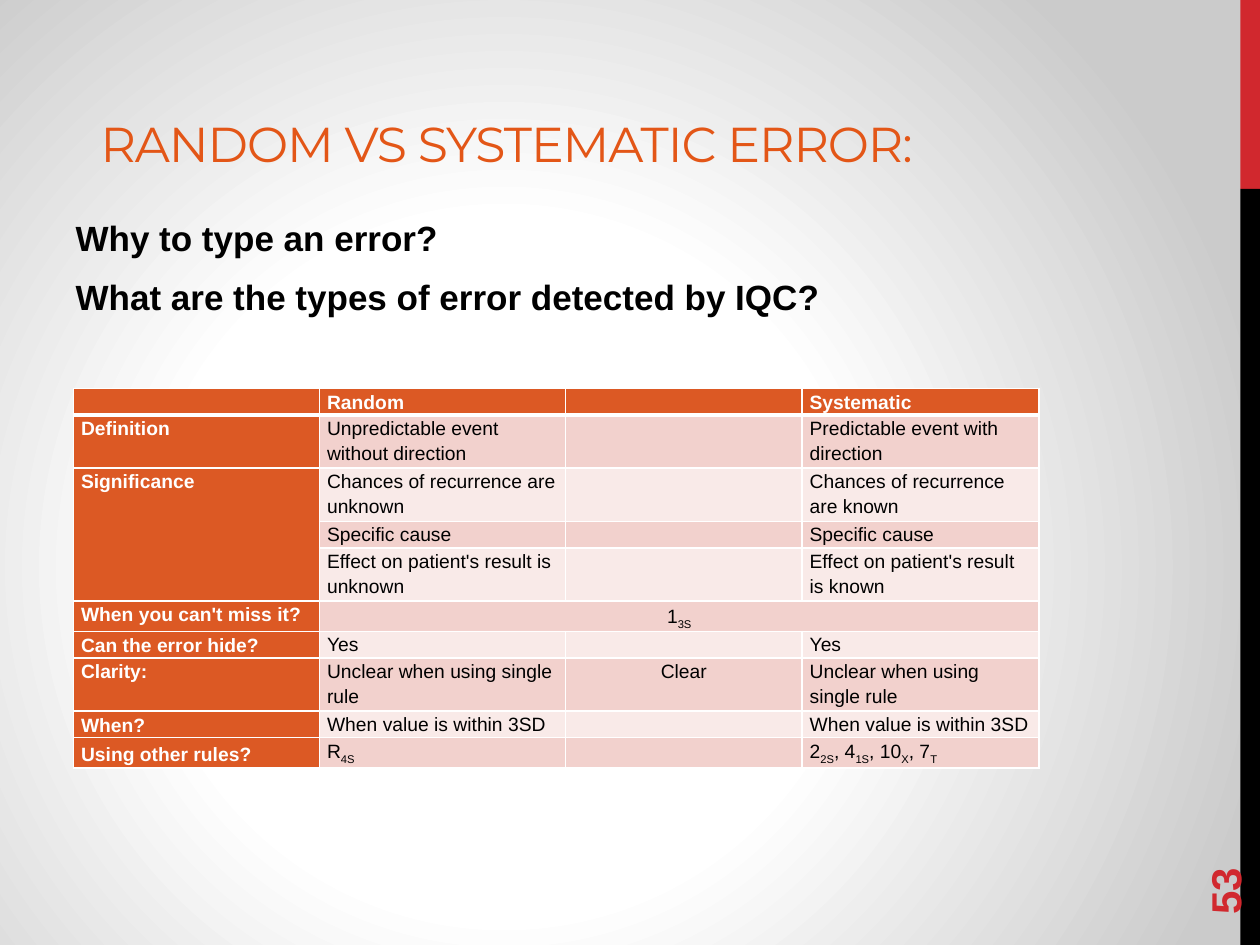
from dataclasses import dataclass

from pptx import Presentation
from pptx.dml.color import RGBColor
from pptx.enum.shapes import MSO_SHAPE
from pptx.enum.text import MSO_ANCHOR, MSO_AUTO_SIZE, PP_ALIGN
from pptx.oxml import parse_xml
from pptx.oxml.ns import nsdecls, qn
from pptx.util import Pt

RECT = MSO_SHAPE.RECTANGLE
LEFT, CENTER = PP_ALIGN.LEFT, PP_ALIGN.CENTER
TOP, MIDDLE, BOTTOM = MSO_ANCHOR.TOP, MSO_ANCHOR.MIDDLE, MSO_ANCHOR.BOTTOM
NO_FIT = MSO_AUTO_SIZE.NONE


@dataclass(frozen=True)
class Theme:
    heading: str = "Montserrat"
    text: str = "Arial"
    title: str = "E35617"
    red: str = "D1282E"
    black: str = "000000"
    white: str = "FFFFFF"
    edge: str = "CBCBCB"
    label: str = "DC5924"
    bands: tuple = ("F2D1CD", "F9EAE8")
    title_size: float = 28
    body_size: float = 20
    number_size: float = 24
    cell_size: float = 11


THEME = Theme()
COL_WIDTHS = (140.6, 140.6, 135.2, 135.2)
ROW_HEIGHTS = (14.6, 28.9, 29, 14.9, 28.7, 16.8, 14.9, 28.8, 14.9, 16.7)
ROWS = (
    ("", "Random", "", "Systematic"),
    ("Definition", "Unpredictable event without direction", "",
     "Predictable event with direction"),
    ("Significance", "Chances of recurrence are unknown", "",
     "Chances of recurrence are known"),
    ("", "Specific cause", "", "Specific cause"),
    ("", "Effect on patient's result is unknown", "",
     "Effect on patient's result is known"),
    ("When you can't miss it?", "1|3S", "", ""),
    ("Can the error hide?", "Yes", "", "Yes"),
    ("Clarity:", "Unclear when using single rule", "Clear",
     "Unclear when using single rule"),
    ("When?", "When value is within 3SD", "", "When value is within 3SD"),
    ("Using other rules?", "R|4S", "", "2|2S|, 4|1S|, 10|X|, 7|T"),
)
CENTERED = {(5, 1), (7, 2)}
MID_ANCHORED = {(5, 1), (6, 0), (8, 0), (9, 0)}


def place(sp, box):
    sp.left, sp.top, sp.width, sp.height = (Pt(v) for v in box)


def style(p, size, color, bold=False, name=THEME.text):
    p.font.name = name
    p.font.size = Pt(size)
    p.font.bold = bold
    p.font.color.rgb = RGBColor.from_string(color)


def add_background(s):
    s.background.fill.gradient()
    grad = s.element.find(".//" + qn("a:gradFill"))
    stops = ((0, THEME.white), (44, THEME.white), (100, THEME.edge))
    gs = "".join(f'<a:gs pos="{pos * 1000}"><a:srgbClr val="{c}"/></a:gs>'
                 for pos, c in stops)
    grad.getparent().replace(grad, parse_xml(
        f'<a:gradFill {nsdecls("a")} rotWithShape="1"><a:gsLst>{gs}</a:gsLst>'
        '<a:path path="circle"><a:fillToRect l="40000" t="60000" r="60000" '
        'b="40000"/></a:path></a:gradFill>'))


def add_side_bar(s, box):
    x, y, w, h = box
    split = h / 5
    for top, height, color in ((y, split, THEME.red),
                               (y + split, h - split, THEME.black)):
        sp = s.shapes.add_shape(RECT, Pt(x), Pt(top), Pt(w), Pt(height))
        sp.shadow.inherit = False
        sp.fill.solid()
        sp.fill.fore_color.rgb = RGBColor.from_string(color)
        sp.line.fill.background()


def add_title(s, box):
    sp = s.shapes.title
    place(sp, box)
    tf = sp.text_frame
    tf.text = "RANDOM VS SYSTEMATIC ERROR:"
    tf.auto_size = NO_FIT
    tf.vertical_anchor = BOTTOM
    tf.margin_left = Pt(21.5)
    p = tf.paragraphs[0]
    p.alignment = LEFT
    style(p, THEME.title_size, THEME.title, name=THEME.heading)
    p.runs[0]._r.get_or_add_rPr().set("spc", "-60")


def add_questions(s, box):
    sp = s.placeholders[1]
    place(sp, box)
    tf = sp.text_frame
    tf.text = ("Why to type an error?\n"
               "What are the types of error detected by IQC?")
    tf.auto_size = NO_FIT
    for p in tf.paragraphs:
        p.space_after = Pt(6)
        style(p, THEME.body_size, THEME.black, bold=True)
        pPr = p._p.get_or_add_pPr()
        pPr.set("marL", "0")
        pPr.set("indent", "0")
        pPr.find(qn("a:defRPr")).addprevious(
            parse_xml(f'<a:buNone {nsdecls("a")}/>'))


def add_number(s, box):
    sp = s.shapes.add_textbox(*(Pt(v) for v in box))
    sp.rotation = 270
    tf = sp.text_frame
    tf.word_wrap = True
    tf.vertical_anchor = MIDDLE
    p = tf.paragraphs[0]
    p.text = "53"
    style(p, THEME.number_size, THEME.red, bold=True)


def set_borders(cell, row):
    tcPr = cell._tc.get_or_add_tcPr()
    widths = {"L": 1, "R": 1, "T": 3 if row == 1 else 1,
              "B": 3 if row == 0 else 1}
    for side, width in widths.items():
        tcPr.append(parse_xml(
            f'<a:ln{side} {nsdecls("a")} w="{Pt(width)}"><a:solidFill>'
            f'<a:srgbClr val="{THEME.white}"/></a:solidFill></a:ln{side}>'))


def fill_cell(cell, row, col, text):
    is_label = row == 0 or col == 0
    set_borders(cell, row)
    cell.fill.solid()
    cell.fill.fore_color.rgb = RGBColor.from_string(
        THEME.label if is_label else THEME.bands[(row - 1) % 2])
    cell.margin_left = cell.margin_right = Pt(4.3)
    cell.margin_top = cell.margin_bottom = Pt(0)
    cell.vertical_anchor = MIDDLE if (row, col) in MID_ANCHORED else TOP
    p = cell.text_frame.paragraphs[0]
    p.alignment = CENTER if (row, col) in CENTERED else LEFT
    p.line_spacing = 1.15
    style(p, THEME.cell_size, THEME.white if is_label else THEME.black, is_label)
    for i, part in enumerate(text.split("|") if text else ()):
        r = p.add_run()
        r.text = part
        if i % 2:
            r._r.get_or_add_rPr().set("baseline", "-25000")


def add_error_table(s, box):
    frame = s.shapes.add_table(len(ROWS), len(COL_WIDTHS), *(Pt(v) for v in box))
    table = frame.table
    for column, width in zip(table.columns, COL_WIDTHS):
        column.width = Pt(width)
    for row, height in zip(table.rows, ROW_HEIGHTS):
        row.height = Pt(height)
    for i, texts in enumerate(ROWS):
        for j, text in enumerate(texts):
            fill_cell(table.cell(i, j), i, j, text)
    table.cell(2, 0).merge(table.cell(4, 0))
    table.cell(5, 1).merge(table.cell(5, 3))


def main():
    prs = Presentation()
    prs.slide_width, prs.slide_height = Pt(720), Pt(540)
    s = prs.slides.add_slide(prs.slide_layouts[1])
    add_background(s)
    add_side_bar(s, (708.75, 0, 11.25, 540))
    add_title(s, (36, 12, 600, 90))
    add_number(s, (648, 463.5, 103.5, 29))
    add_questions(s, (36, 120, 600, 362))
    add_error_table(s, (42, 222, sum(COL_WIDTHS), sum(ROW_HEIGHTS)))
    prs.save("out.pptx")


if __name__ == "__main__":
    main()
